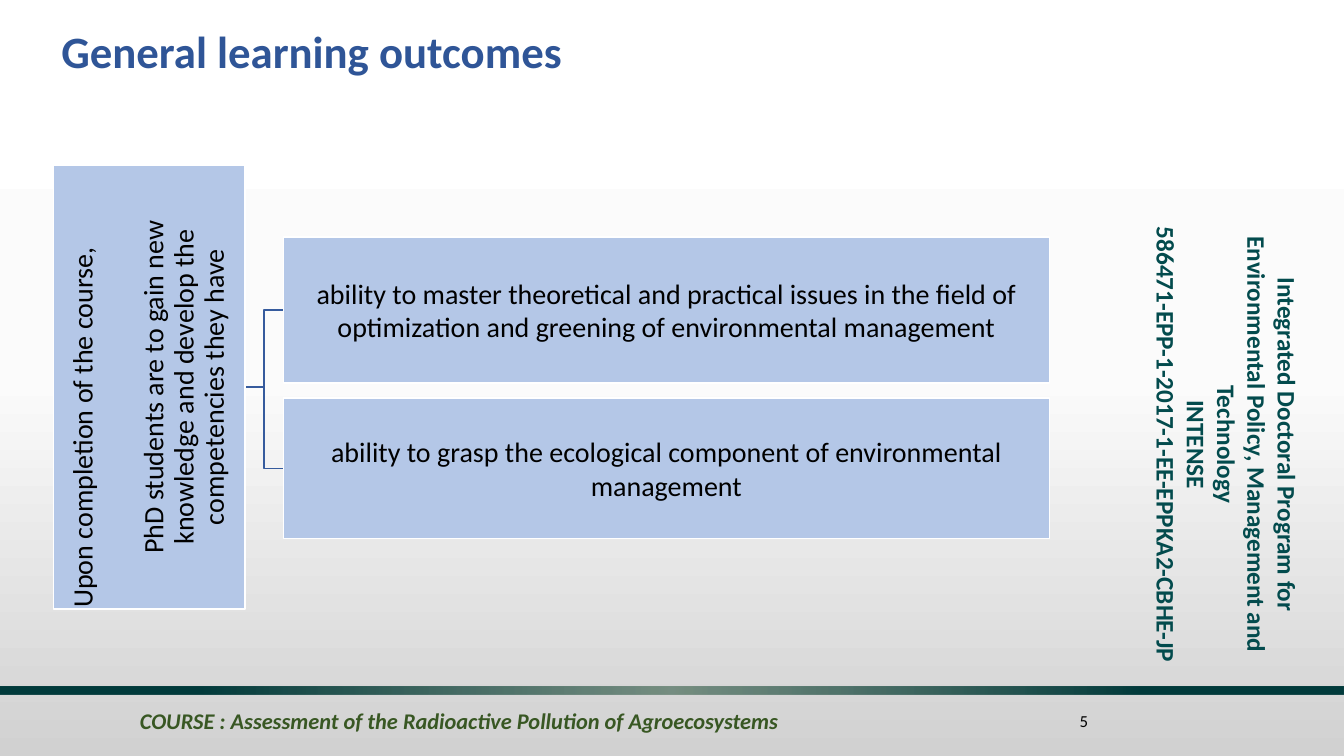
from lxml import etree
from pptx import Presentation
from pptx.dml.color import RGBColor
from pptx.enum.shapes import MSO_SHAPE
from pptx.enum.text import MSO_ANCHOR, PP_ALIGN
from pptx.oxml.ns import nsdecls, qn
from pptx.util import Inches, Pt

FONT = "Calibri"
TITLE_BLUE = RGBColor(0x2F, 0x55, 0x97)
BOX_BLUE = RGBColor(0xB4, 0xC7, 0xE7)
LINK_BLUE = RGBColor(0x36, 0x5B, 0x9D)
PROGRAM_TEAL = RGBColor(0x03, 0x4B, 0x4D)
BAR_TEAL = RGBColor(0x02, 0x3B, 0x3C)
BAR_SAGE = RGBColor(0x66, 0x82, 0x73)
COURSE_GREEN = RGBColor(0x38, 0x57, 0x23)
WHITE = RGBColor(0xFF, 0xFF, 0xFF)
OFF_WHITE = RGBColor(0xFB, 0xFB, 0xFB)
GREY = RGBColor(0xD1, 0xD1, 0xD1)
BLACK = RGBColor(0, 0, 0)

DOWNWARD = '<a:lin ang="5400000" scaled="0"/>'
FROM_CENTRE = ('<a:path path="circle"><a:fillToRect l="50000" t="50000" '
               'r="50000" b="50000"/></a:path>')

PROGRAM_LINES = [
    "Integrated Doctoral Program for Environmental Policy, Management and Technology",
    "INTENSE",
    "586471-EPP-1-2017-1-EE-EPPKA2-CBHE-JP",
]
OUTCOMES = [
    (2.35, 1.45, "ability to master theoretical and practical issues in the field of "
                 "optimization and greening of environmental management"),
    (3.95, 1.39, "ability to grasp the ecological component of environmental management"),
]
OUTCOME_LEFT, OUTCOME_WIDTH = 2.81, 7.6
INTRO_RIGHT, INTRO_MIDDLE, FORK_X = 2.43, 3.84, 2.62


def set_gradient(properties, stops, direction):
    """Swap the solid fill for a gradient of (percent, colour, opacity) stops."""
    marks = "".join(
        f'<a:gs pos="{pos * 1000}"><a:srgbClr val="{colour}">'
        f'<a:alpha val="{opacity * 1000}"/></a:srgbClr></a:gs>'
        for pos, colour, opacity in stops)
    gradient = etree.fromstring(
        f'<a:gradFill {nsdecls("a")} rotWithShape="1">'
        f'<a:gsLst>{marks}</a:gsLst>{direction}</a:gradFill>')
    properties.replace(properties.find(qn("a:solidFill")), gradient)


def add_run(paragraph, words, size, colour, bold=False, italic=False):
    run = paragraph.add_run()
    run.text = words
    font = run.font
    font.name, font.size, font.bold, font.italic = FONT, Pt(size), bold, italic
    font.color.rgb = colour


def add_label(slide, left, top, width, height, anchor=MSO_ANCHOR.MIDDLE,
              align=PP_ALIGN.LEFT):
    """Add an empty wrapping text box; return it with its first paragraph."""
    label = slide.shapes.add_textbox(
        Inches(left), Inches(top), Inches(width), Inches(height))
    frame = label.text_frame
    frame.word_wrap = True
    frame.vertical_anchor = anchor
    paragraph = frame.paragraphs[0]
    paragraph.alignment = align
    return label, paragraph


def add_box(slide, left, top, width, height):
    box = slide.shapes.add_shape(
        MSO_SHAPE.RECTANGLE, Inches(left), Inches(top), Inches(width), Inches(height))
    box.shadow.inherit = False
    box.fill.solid()
    box.fill.fore_color.rgb = BOX_BLUE
    box.line.color.rgb = WHITE
    box.line.width = Pt(1)
    frame = box.text_frame
    frame.word_wrap = True
    frame.vertical_anchor = MSO_ANCHOR.MIDDLE
    frame.margin_left = frame.margin_right = Inches(0.01)
    frame.margin_top = frame.margin_bottom = Inches(0.01)
    frame.paragraphs[0].alignment = PP_ALIGN.CENTER
    return box


def add_link(slide, outcome_middle):
    """Draw the elbow from the introduction to one outcome."""
    points = [(INTRO_RIGHT, INTRO_MIDDLE), (FORK_X, INTRO_MIDDLE),
              (FORK_X, outcome_middle), (OUTCOME_LEFT, outcome_middle)]
    start, *rest = [(Inches(x), Inches(y)) for x, y in points]
    builder = slide.shapes.build_freeform(*start)
    builder.add_line_segments(rest, close=False)
    link = builder.convert_to_shape()
    link.shadow.inherit = False
    link.fill.background()
    link.line.color.rgb = LINK_BLUE
    link.line.width = Pt(1)


def add_backdrop(slide):
    slide.background.fill.solid()
    set_gradient(slide.element.find(".//" + qn("p:bgPr")),
                 [(0, WHITE, 100), (50, OFF_WHITE, 100), (100, GREY, 100)], DOWNWARD)
    bar = slide.shapes.add_shape(
        MSO_SHAPE.RECTANGLE, 0, Inches(6.81), Inches(13.33), Inches(0.08))
    bar.shadow.inherit = False
    bar.line.fill.background()
    bar.fill.solid()
    set_gradient(bar.element.spPr, [(0, BAR_SAGE, 85), (70, BAR_TEAL, 100)], FROM_CENTRE)


def add_program_name(slide):
    label, paragraph = add_label(slide, 9.75, 3.6, 4.82, 1.62,
                                 MSO_ANCHOR.TOP, PP_ALIGN.CENTER)
    label.rotation = 90
    for number, line in enumerate(PROGRAM_LINES):
        if number:
            paragraph.add_line_break()
        add_run(paragraph, line, 18, PROGRAM_TEAL, bold=True)


def add_introduction(slide):
    box = add_box(slide, -0.72, 2.89, 4.4, 1.9)
    box.rotation = 270
    opening = box.text_frame.paragraphs[0]
    opening.alignment = PP_ALIGN.LEFT
    opening.line_spacing = 0.9
    opening.space_after = Pt(29)
    add_run(opening, "Upon completion of the course,", 20, BLACK)
    aim = box.text_frame.add_paragraph()
    aim.alignment = PP_ALIGN.CENTER
    aim.line_spacing = 0.9
    add_run(aim, "PhD students are to gain new knowledge and develop the "
                 "competencies they have", 20, BLACK)


def main():
    deck = Presentation()
    deck.slide_width, deck.slide_height = Inches(13.33), Inches(7.5)
    slide = deck.slides.add_slide(deck.slide_layouts[6])

    add_backdrop(slide)
    add_program_name(slide)

    _, title = add_label(slide, 0.51, 0.17, 9.91, 0.66, MSO_ANCHOR.BOTTOM)
    title.line_spacing = 0.9
    add_run(title, "General learning outcomes", 32, TITLE_BLUE, bold=True)
    _, page = add_label(slide, 10.21, 6.95, 0.68, 0.4, align=PP_ALIGN.RIGHT)
    add_run(page, "5", 12, BLACK)
    _, course = add_label(slide, 1.29, 6.89, 11.07, 0.51)
    add_run(course, "COURSE : Assessment of the Radioactive Pollution of Agroecosystems",
            16, COURSE_GREEN, bold=True, italic=True)

    for top, height, _ in OUTCOMES:
        add_link(slide, top + height / 2)
    add_introduction(slide)
    for top, height, outcome in OUTCOMES:
        box = add_box(slide, OUTCOME_LEFT, top, OUTCOME_WIDTH, height)
        add_run(box.text_frame.paragraphs[0], outcome, 20, BLACK)

    deck.save("out.pptx")


if __name__ == "__main__":
    main()
